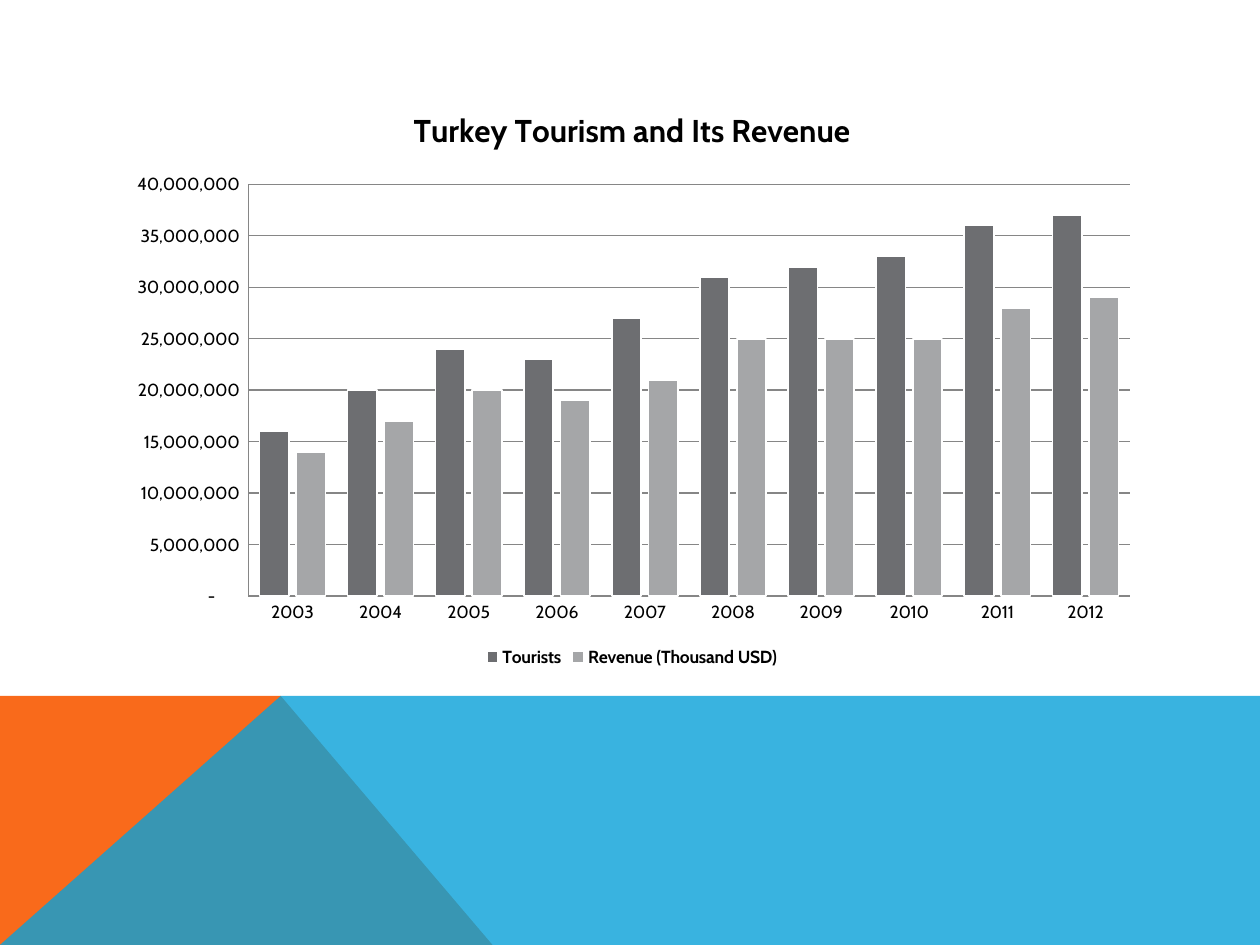
from lxml.etree import SubElement
from pptx import Presentation
from pptx.chart.data import CategoryChartData as ChartData
from pptx.dml.color import RGBColor
from pptx.enum.chart import XL_CHART_TYPE as ChartType
from pptx.enum.chart import XL_LEGEND_POSITION as LegendPosition
from pptx.enum.chart import XL_TICK_MARK as TickMark
from pptx.oxml import parse_xml
from pptx.oxml.ns import nsdecls, qn
from pptx.util import Cm, Pt

FONT = "Cabin"


def paint(fill, color, opacity=100):
    fill.solid()
    fill.fore_color.rgb = RGBColor.from_string(color)
    return opacity


def write(frame, text, size=10, bold=False, color="000000"):
    span = frame.paragraphs[0].add_run()
    span.text = text
    span.font.name = FONT
    span.font.size = Pt(size)
    span.font.bold = bold
    paint(span.font.fill, color)


deck = Presentation()
deck.slide_width = Cm(25.4)
deck.slide_height = Cm(19.05)
page = deck.slides.add_slide(deck.slide_layouts[6])

bottom, band_top, peak, right = 19.05, 14.03, 5.66, 25.4
bands = [
    ([(0, bottom), (0, band_top), (peak, band_top), (9.93, bottom)], "F96A1B", 100),
    ([(0, bottom), (peak, band_top), (right, band_top), (right, bottom)], "08A1D9", 80),
]
for corners, color, opacity in bands:
    points = [(Cm(x), Cm(y)) for x, y in corners]
    builder = page.shapes.build_freeform(*points[0])
    builder.add_line_segments(points[1:], close=True)
    band = builder.convert_to_shape()
    band.shadow.inherit = False
    band.line.fill.background()
    paint(band.fill, color)
    if opacity < 100:
        tint = band.element.spPr.find(qn("a:solidFill")).find(qn("a:srgbClr"))
        SubElement(tint, qn("a:alpha"), val=str(opacity * 1000))

tourism = ChartData()
tourism.categories = [str(year) for year in range(2003, 2013)]
millions = {
    "Tourists": [16, 20, 24, 23, 27, 31, 32, 33, 36, 37],
    "Revenue (Thousand USD)": [14, 17, 20, 19, 21, 25, 25, 25, 28, 29],
}
for name, values in millions.items():
    tourism.add_series(name, [value * 1_000_000 for value in values])

chart = page.shapes.add_chart(
    ChartType.COLUMN_CLUSTERED, Cm(2.29), Cm(1.7), Cm(20.9), Cm(11.86), tourism
).chart
chart.font.name = FONT
chart.font.size = Pt(10)
paint(chart.font.fill, "000000")
chart.has_title = True
write(chart.chart_title.text_frame, "Turkey Tourism and Its Revenue", size=18, bold=True)
chart.chart_title.include_in_layout = False

chart.has_legend = True
chart.legend.position = LegendPosition.BOTTOM
chart.legend.include_in_layout = False
chart.legend.font.name = FONT
chart.legend.font.size = Pt(10)
chart.legend.font.bold = True
paint(chart.legend.font.fill, "000000")

columns = chart.plots[0]
columns.vary_by_categories = False
columns.gap_width = 75
columns.overlap = -25
for series, color in zip(columns.series, ("6D6E71", "A5A6A8")):
    series.invert_if_negative = False
    paint(series.format.fill, color)
    paint(series.format.line.fill, "FFFFFF")
    series.format.line.width = Pt(1)

amounts = chart.value_axis
amounts.minimum_scale = 0
amounts.maximum_scale = 40_000_000
amounts.major_unit = 5_000_000
amounts.has_major_gridlines = True
amounts.tick_labels.number_format = r'_(* #,##0_);_(* \(#,##0\);_(* "-"??_);_('
amounts.tick_labels.number_format_is_linked = False
for axis in (chart.category_axis, amounts):
    axis.major_tick_mark = TickMark.NONE
    axis.minor_tick_mark = TickMark.NONE
for ruled in (chart.category_axis, amounts, amounts.major_gridlines):
    paint(ruled.format.line.fill, "868686")
    ruled.format.line.width = Pt(0.75)

plot_area = chart.element.chart.plotArea
for automatic in plot_area.findall(qn("c:layout")):
    plot_area.remove(automatic)
plot_area.insert(0, parse_xml(
    f'<c:layout {nsdecls("c")}><c:manualLayout><c:layoutTarget val="inner"/>'
    '<c:xMode val="edge"/><c:yMode val="edge"/><c:x val="0.13"/><c:y val="0.17"/>'
    '<c:w val="0.85"/><c:h val="0.7"/></c:manualLayout></c:layout>'
))

deck.save("out.pptx")
